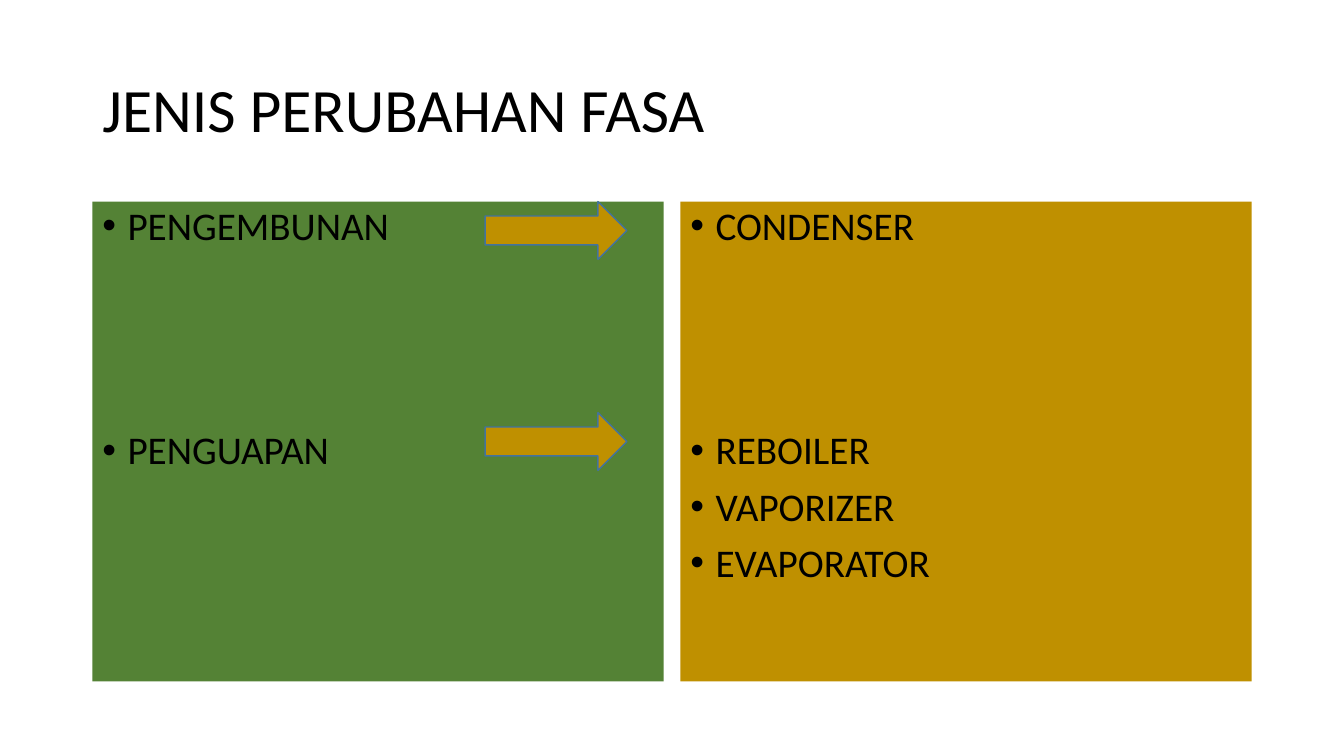
from dataclasses import dataclass

from lxml import etree
from pptx import Presentation, util as u
from pptx.dml.color import RGBColor
from pptx.enum import shapes, text
from pptx.oxml.ns import qn

EMU_PER_PX = 9525


@dataclass(frozen=True)
class Theme:
    font: str = "Calibri"
    ink: str = "000000"
    green: str = "548235"
    gold: str = "BF9000"
    outline: str = "43739E"
    title_size: int = 44
    body_size: int = 28
    line_spacing: float = 0.9
    item_gap: int = 10   # points between neighbouring items
    group_gap: int = 130  # points before a new group


def px(n):
    return u.Emu(n * EMU_PER_PX)


def apply(obj, formats):
    for name, value in formats.items():
        setattr(obj, name, value)


class SlideBuilder:
    def __init__(self, prs, theme):
        self.theme = theme
        self.s = prs.slides.add_slide(prs.slide_layouts[5])  # title only

    def fill_paragraph(self, p, words, size, space_before=0):
        apply(p, {"alignment": text.PP_ALIGN.LEFT,
                  "line_spacing": self.theme.line_spacing,
                  "space_before": u.Pt(space_before)})
        r = p.add_run()
        r.text = words
        apply(r.font, {"name": self.theme.font, "size": u.Pt(size)})
        r.font.color.rgb = RGBColor.from_string(self.theme.ink)

    def title(self, words, x, y, w, h):
        sp = self.s.shapes.title
        apply(sp, {"left": px(x), "top": px(y), "width": px(w), "height": px(h)})
        tf = sp.text_frame
        apply(tf, {"vertical_anchor": text.MSO_ANCHOR.MIDDLE,
                   "auto_size": text.MSO_AUTO_SIZE.NONE, "word_wrap": True})
        self.fill_paragraph(tf.paragraphs[0], words, self.theme.title_size)

    def shape(self, kind, x, y, w, h, fill, line=None):
        sp = self.s.shapes.add_shape(kind, px(x), px(y), px(w), px(h))
        sp.shadow.inherit = False
        sp.fill.solid()
        sp.fill.fore_color.rgb = RGBColor.from_string(fill)
        if line:
            sp.line.color.rgb = RGBColor.from_string(line)
            sp.line.width = u.Pt(1)
        else:
            sp.line.fill.background()
        return sp

    def panel(self, groups, x, y, w, h, fill):
        sp = self.shape(shapes.MSO_SHAPE.RECTANGLE, x, y, w, h, fill)
        tf = sp.text_frame
        apply(tf, {"vertical_anchor": text.MSO_ANCHOR.TOP, "word_wrap": True})
        p = tf.paragraphs[0]
        for g, items in enumerate(groups):
            for i, item in enumerate(items):
                if g or i:
                    p = tf.add_paragraph()
                gap = self.theme.group_gap if g and not i else self.theme.item_gap
                self.fill_paragraph(p, item, self.theme.body_size, gap)
                self.bullet(p)

    def bullet(self, p):
        pPr = p._p.get_or_add_pPr()
        indent = u.Inches(0.25)
        pPr.set("marL", str(indent))
        pPr.set("indent", str(-indent))
        etree.SubElement(pPr, qn("a:buFont")).set("typeface", "Arial")
        etree.SubElement(pPr, qn("a:buChar")).set("char", "•")

    def arrow(self, x, y, w, h):
        self.shape(shapes.MSO_SHAPE.RIGHT_ARROW, x, y, w, h,
                   self.theme.gold, self.theme.outline)


def main():
    prs = Presentation()
    apply(prs, {"slide_width": px(1280), "slide_height": px(720)})
    theme = Theme()
    slide = SlideBuilder(prs, theme)

    # Title
    slide.title("JENIS PERUBAHAN FASA", 88, 38, 1104, 139)

    # Phase changes on the left, their equipment on the right
    left, top, width, height, gap = 88, 192, 544, 457, 16
    panels = [
        (theme.green, [["PENGEMBUNAN"], ["PENGUAPAN"]]),
        (theme.gold, [["CONDENSER"], ["REBOILER", "VAPORIZER", "EVAPORATOR"]]),
    ]
    for col, (fill, groups) in enumerate(panels):
        slide.panel(groups, left + col * (width + gap), top, width, height, fill)

    # Arrows from each phase change to its equipment
    for row in range(2):
        slide.arrow(462, top + row * 201, 135, 55)

    prs.save("out.pptx")


if __name__ == "__main__":
    main()
